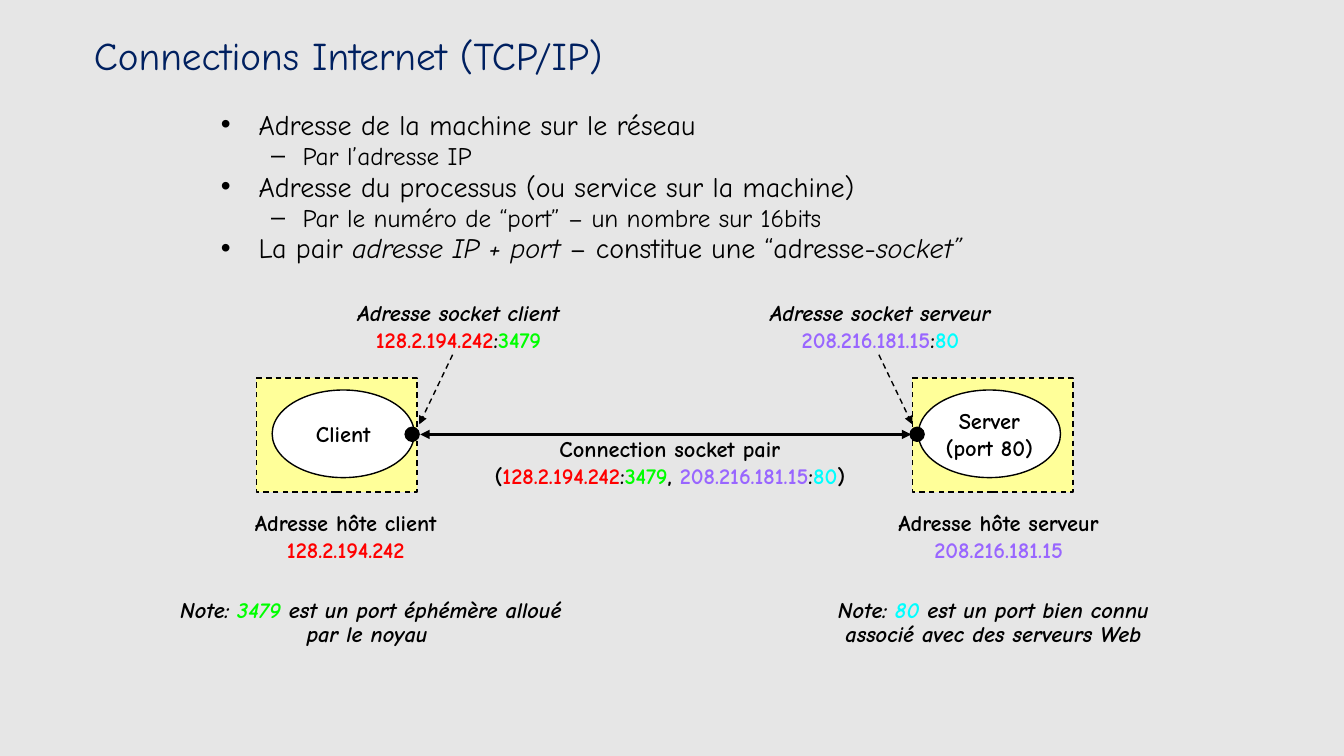
from lxml import etree
from pptx import Presentation
from pptx.dml.color import RGBColor
from pptx.enum import dml, shapes, text
from pptx.oxml.ns import qn
from pptx.util import Pt

BLACK = RGBColor(0, 0, 0)
WHITE = RGBColor(255, 255, 255)
GREY = RGBColor(0xE6, 0xE6, 0xE6)
NAVY = RGBColor(0, 0x20, 0x60)
YELLOW = RGBColor(255, 255, 0x99)
RED = RGBColor(255, 0, 0)
GREEN = RGBColor(0, 255, 0)
VIOLET = RGBColor(0x99, 0x66, 255)
CYAN = RGBColor(0, 255, 255)
FONT = "Comic Neue"
CLIENT = [("128.2.194.242", RED), (":", BLACK), ("3479", GREEN)]
SERVER = [("208.216.181.15", VIOLET), (":", BLACK), ("80", CYAN)]


def write(para, words, size=16, bold=True, italic=False, color=BLACK, align=text.PP_ALIGN.CENTER):
    """Add words, a string or (string, colour) pairs, to a paragraph."""
    para.alignment = align
    for part, tint in [(words, color)] if isinstance(words, str) else words:
        run = para.add_run()
        run.text = part
        font = run.font
        font.name, font.size, font.bold, font.italic = FONT, Pt(size), bold, italic
        font.color.rgb = tint


def lines(frame, rows, space=None, **style):
    """Write rows into a frame; a row may be (words, own format)."""
    for i, row in enumerate(rows):
        para = frame.paragraphs[0] if i == 0 else frame.add_paragraph()
        words, own = row if isinstance(row, tuple) else (row, {})
        write(para, words, **{**style, **own})
        if space:
            para.line_spacing = space


def label(slide, box, rows, middle=True, **style):
    """Place centred lines in a text box."""
    frame = slide.shapes.add_textbox(*map(Pt, box)).text_frame
    frame.word_wrap = False
    frame.vertical_anchor = text.MSO_ANCHOR.MIDDLE if middle else text.MSO_ANCHOR.TOP
    lines(frame, rows, **style)


def shape(slide, kind, box, fill, dash=False, rows=()):
    """Draw a filled shape with a thin black outline."""
    form = slide.shapes.add_shape(kind, *map(Pt, box))
    form.shadow.inherit = False
    form.fill.solid()
    form.fill.fore_color.rgb = fill
    form.line.color.rgb = BLACK
    form.line.width = Pt(1)
    if dash:
        form.line.dash_style = dml.MSO_LINE.DASH
    form.text_frame.word_wrap = False
    form.text_frame.vertical_anchor = text.MSO_ANCHOR.MIDDLE
    lines(form.text_frame, rows)


def arrow(slide, start, end, width=1, dash=False, both=False):
    """Draw a straight arrow between two points."""
    link = slide.shapes.add_connector(shapes.MSO_CONNECTOR.STRAIGHT, *map(Pt, start + end))
    link.line.color.rgb = BLACK
    link.line.width = Pt(width)
    if dash:
        link.line.dash_style = dml.MSO_LINE.DASH
    props = link._element.spPr
    for tag in ["a:headEnd", "a:tailEnd"] if both else ["a:tailEnd"]:
        etree.SubElement(props.find(qn("a:ln")), qn(tag), type="triangle")
    etree.SubElement(props, qn("a:effectLst"))


def head(slide, box):
    """Fill the title placeholder."""
    title = slide.shapes.title
    title.left, title.top, title.width, title.height = map(Pt, box)
    title.text_frame.vertical_anchor = text.MSO_ANCHOR.MIDDLE
    write(title.text_frame.paragraphs[0], "Connections Internet (TCP/IP)", size=28, bold=False, color=NAVY)


def points(slide, box):
    """Fill the body placeholder with the two-level list."""
    body = slide.placeholders[1]
    body.left, body.top, body.width, body.height = map(Pt, box)
    frame = body.text_frame
    frame.auto_size = text.MSO_AUTO_SIZE.NONE
    items = [
        (0, [("Adresse de la machine sur le réseau", False)]),
        (1, [("Par l’adresse IP", False)]),
        (0, [("Adresse du processus (ou service sur la machine)", False)]),
        (1, [("Par le numéro de “port” – un nombre sur 16bits", False)]),
        (0, [("La pair ", False), ("adresse IP + port ", True),
             ("– constitue une “adresse-", False), ("socket”", True)]),
    ]
    for i, (level, parts) in enumerate(items):
        para = frame.paragraphs[0] if i == 0 else frame.add_paragraph()
        para.level = level
        para.line_spacing = 0.8
        size, left, hang, mark = [(20, 27, 27, "•"), (18, 58.5, 22.5, "–")][level]
        for words, slant in parts:
            write(para, words, size=size, bold=False, italic=slant, align=text.PP_ALIGN.LEFT)
        props = para._p.get_or_add_pPr()
        props.set("marL", str(Pt(left)))
        props.set("indent", str(-Pt(hang)))
        gap = etree.SubElement(props, qn("a:spcBef"))
        etree.SubElement(gap, qn("a:spcPct"), val="20000")
        etree.SubElement(props, qn("a:buFont"), typeface="Arial")
        etree.SubElement(props, qn("a:buChar"), char=mark)


def host(slide, box, name, pair, place, note, oval, dot, tip, mids):
    """Draw one machine with its process, socket, labels and note."""
    x, y, w, h = box
    kind = shapes.MSO_SHAPE
    shape(slide, kind.RECTANGLE, box, YELLOW, dash=True)
    shape(slide, kind.OVAL, (x + oval, y + 8.6, 101.5, 62.6), WHITE, rows=name)
    shape(slide, kind.OVAL, (x + dot, y + 35.2, 10, 10), BLACK)
    start, end = tip
    arrow(slide, (x + start, y - 16.6), (x + end, y + 33.1), dash=True)
    sock, addr, memo = (x + mid for mid in mids)
    label(slide, (sock - 92, y - 60.3, 184, 46), [(f"Adresse socket {place}", {"italic": True}), pair])
    label(slide, (addr - 92, y + 90, 184, 46), [f"Adresse hôte {place}", pair[:1]])
    label(slide, (memo - 167, y + 154.5, 334, 42.5), note, middle=False, space=0.9, italic=True)


def link(slide, box):
    """Draw the connection arrow and its socket pair."""
    x, y, w, h = box
    arrow(slide, (x, y), (x + w, y), width=2.25, both=True)
    pair = [("(", BLACK), *CLIENT, (", ", BLACK), *SERVER, (")", BLACK)]
    label(slide, (x, y - 3, w + 6, h), ["Connection socket pair", pair])


def main():
    """Build the slide and save it."""
    deck = Presentation()
    deck.slide_width, deck.slide_height = Pt(960), Pt(540)
    slide = deck.slides.add_slide(deck.slide_layouts[1])
    slide.background.fill.solid()
    slide.background.fill.fore_color.rgb = GREY
    head(slide, (36.7, 17.3, 424, 43.2))
    points(slide, (150.5, 77.8, 648, 145.4))
    host(slide, (183, 270, 115, 81.4), ["Client"],
         [("128.2.194.242", RED), *CLIENT[1:]], "client",
         [[("Note: ", BLACK), ("3479 ", GREEN), ("est un port éphémère alloué", BLACK)], "par le noyau "],
         oval=11.4, dot=106.4, tip=(140.3, 116.5), mids=(144.5, 64, 82))
    host(slide, (651.6, 270, 115, 81.4), ["Server", "(port 80)"], SERVER, "serveur",
         [[("Note: ", BLACK), ("80 ", CYAN), ("est un port bien connu", BLACK)],
          "associé avec des serveurs Web"],
         oval=4.4, dot=-1.5, tip=(-23.8, 0), mids=(-22.7, 61.7, 58))
    link(slide, (300.2, 310.3, 350.7, 46))
    deck.save("out.pptx")


if __name__ == "__main__":
    main()
